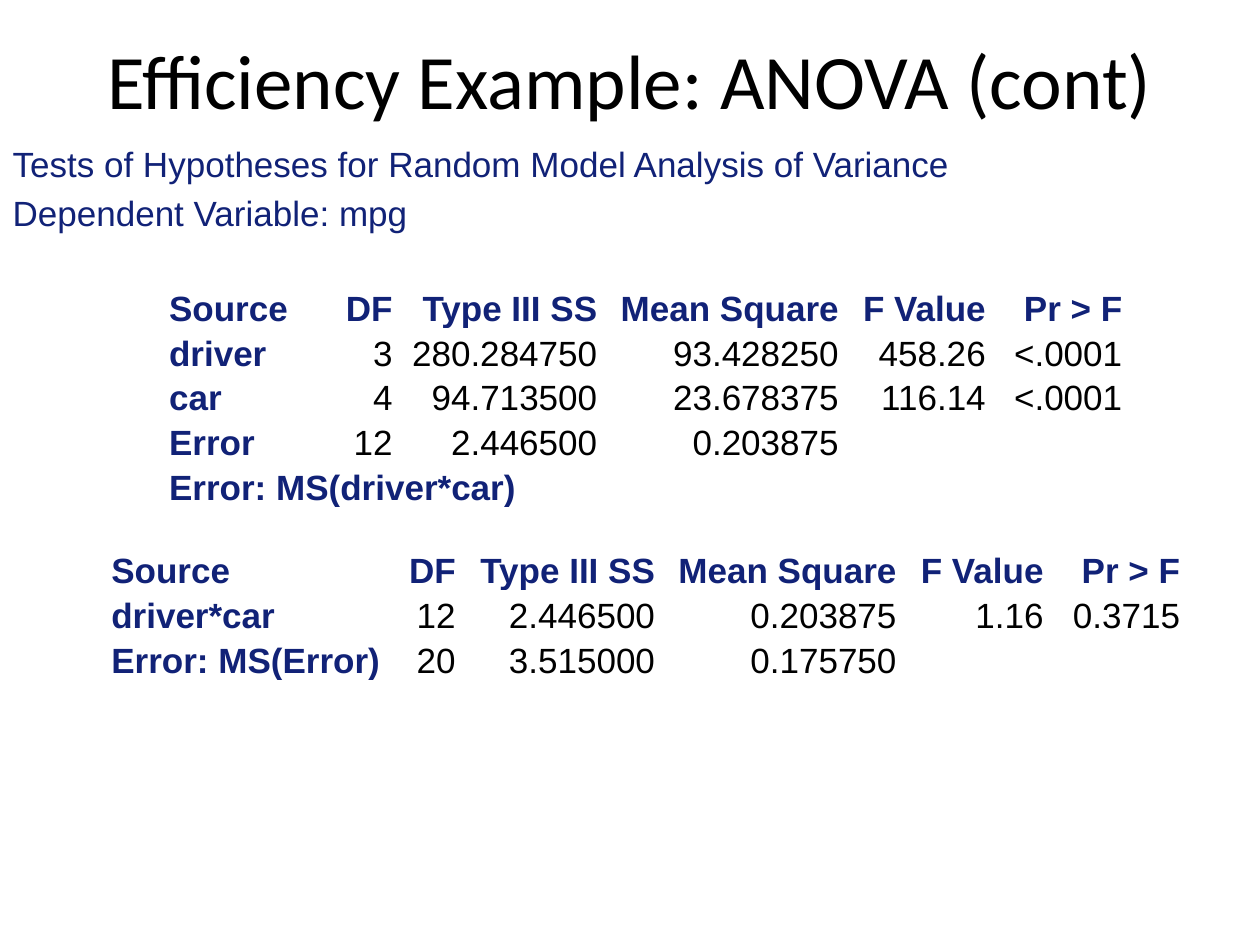
from dataclasses import dataclass

from lxml.etree import SubElement
from pptx import Presentation
from pptx.dml.color import RGBColor
from pptx.enum.text import MSO_ANCHOR, MSO_AUTO_SIZE, PP_ALIGN
from pptx.oxml.ns import qn
from pptx.util import Pt


@dataclass(frozen=True)
class Theme:
    """Colours, fonts and sizes of the slide."""
    black: RGBColor = RGBColor(0x00, 0x00, 0x00)
    navy: RGBColor = RGBColor(0x11, 0x22, 0x77)
    title_font: str = "Calibri"
    body_font: str = "Arial"
    title_size: int = 44
    body_size: int = 20
    row_height: float = 25.6


THEME = Theme()
HEADINGS = ["Source", "DF", "Type III SS", "Mean Square", "F Value", "Pr > F"]
SHARED_WIDTHS = [138, 84, 78]
EFFECT_ROWS = [
    HEADINGS,
    ["driver", "3", "280.284750", "93.428250", "458.26", "<.0001"],
    ["car", "4", "94.713500", "23.678375", "116.14", "<.0001"],
    ["Error", "12", "2.446500", "0.203875"],
    ["Error: MS(driver*car)"],
]
INTERACTION_ROWS = [
    HEADINGS,
    ["driver*car", "12", "2.446500", "0.203875", "1.16", "0.3715"],
    ["Error: MS(Error)", "20", "3.515000", "0.175750"],
]


def place(shape, left, top, width, height):
    """Move and size a shape in points."""
    shape.left, shape.top = Pt(left), Pt(top)
    shape.width, shape.height = Pt(width), Pt(height)


def add_run(paragraph, text, font_name, size, color, bold=False):
    """Add one formatted run to a paragraph."""
    run = paragraph.add_run()
    run.text = text
    run.font.name = font_name
    run.font.size = Pt(size)
    run.font.bold = bold
    run.font.color.rgb = color


def fill_title(title, text):
    """Write the slide title."""
    place(title, 36, 0, 648, 90)
    title.text_frame.vertical_anchor = MSO_ANCHOR.MIDDLE
    paragraph = title.text_frame.paragraphs[0]
    paragraph.alignment = PP_ALIGN.CENTER
    add_run(paragraph, text, THEME.title_font, THEME.title_size, THEME.black)


def fill_body(body, lines):
    """Write unbulleted lines with a hanging indent."""
    place(body, 0, 78, 720, 78)
    frame = body.text_frame
    frame.auto_size = MSO_AUTO_SIZE.NONE
    for index, line in enumerate(lines):
        paragraph = frame.add_paragraph() if index else frame.paragraphs[0]
        paragraph.space_before = Pt(4)
        properties = paragraph._p.get_or_add_pPr()
        properties.set("marL", str(Pt(27)))
        properties.set("indent", str(-Pt(27)))
        SubElement(properties, qn("a:buNone"))
        add_run(paragraph, line, THEME.body_font, THEME.body_size, THEME.navy)


def fill_cell(cell, text, is_label, is_heading):
    """Format one table cell and write its text."""
    cell.fill.background()
    cell.vertical_anchor = MSO_ANCHOR.MIDDLE
    cell.margin_left = cell.margin_right = Pt(3.6)
    cell.margin_top = cell.margin_bottom = 0
    if not text:
        return
    paragraph = cell.text_frame.paragraphs[0]
    paragraph.alignment = PP_ALIGN.LEFT if is_label else PP_ALIGN.RIGHT
    paragraph.line_spacing = 1.15
    paragraph.space_before = paragraph.space_after = Pt(5)
    emphasis = is_label or is_heading
    color = THEME.navy if emphasis else THEME.black
    add_run(paragraph, text, THEME.body_font, THEME.body_size, color, emphasis)


def add_anova_table(slide, left, top, widths, rows):
    """Add a plain table, spanning any row that has only a label."""
    frame = slide.shapes.add_table(
        len(rows), len(widths), Pt(left), Pt(top),
        Pt(sum(widths)), Pt(THEME.row_height * len(rows)))
    table = frame.table
    table.first_row = table.horz_banding = False
    for column, width in zip(table.columns, widths):
        column.width = Pt(width)
    for row_index, values in enumerate(rows):
        table.rows[row_index].height = Pt(THEME.row_height)
        padded = values + [""] * (len(widths) - len(values))
        for column_index, text in enumerate(padded):
            fill_cell(table.cell(row_index, column_index), text,
                      column_index == 0, row_index == 0)
        if len(values) == 1:
            table.cell(row_index, 0).merge(table.cell(row_index, len(widths) - 1))


def main():
    """Build and save the slide."""
    presentation = Presentation()
    presentation.slide_width, presentation.slide_height = Pt(720), Pt(540)
    slide = presentation.slides.add_slide(presentation.slide_layouts[1])
    fill_title(slide.shapes.title, "Efficiency Example: ANOVA (cont)")
    fill_body(slide.placeholders[1], [
        "Tests of Hypotheses for Random Model Analysis of Variance",
        "Dependent Variable: mpg",
    ])
    add_anova_table(slide, 93, 162, [85, 50, 117] + SHARED_WIDTHS, EFFECT_ROWS)
    add_anova_table(slide, 60, 312, [162, 42, 114] + SHARED_WIDTHS, INTERACTION_ROWS)
    presentation.save("out.pptx")


if __name__ == "__main__":
    main()
